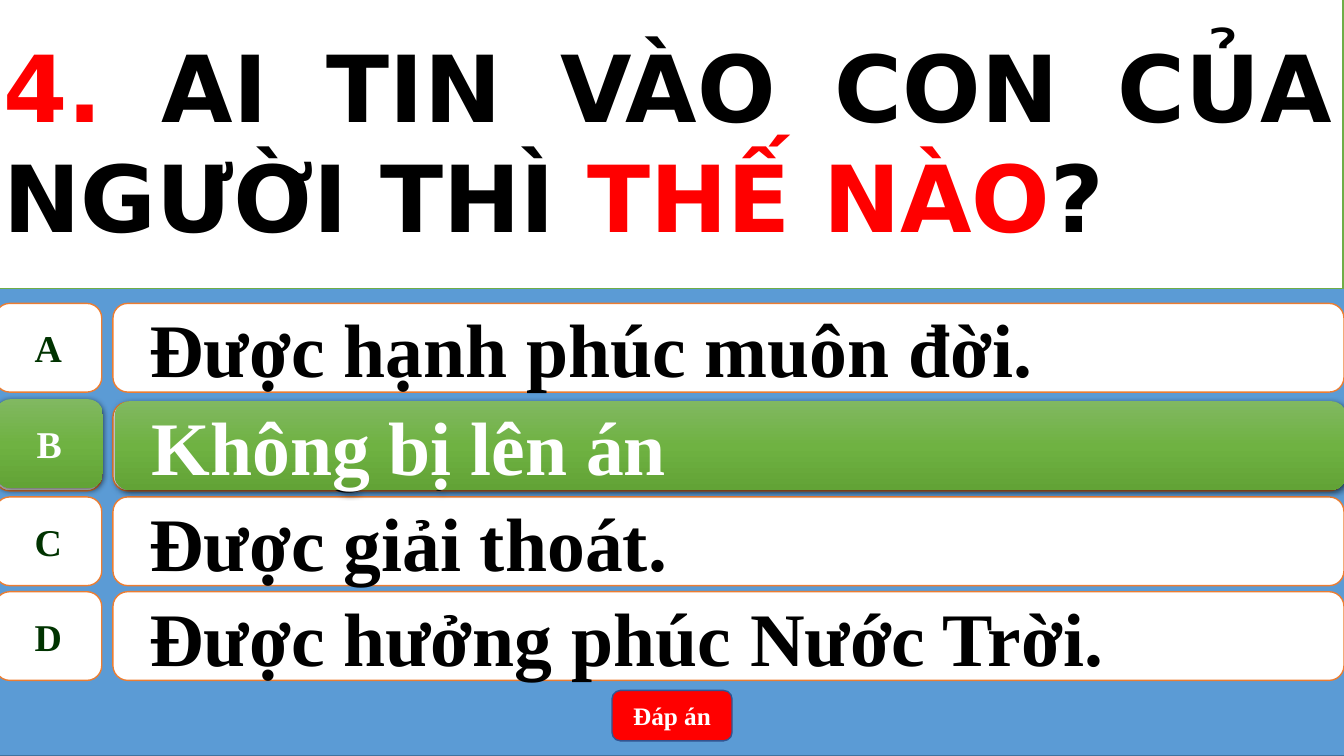
from copy import deepcopy
from dataclasses import dataclass

from pptx import Presentation
from pptx.dml.color import RGBColor
from pptx.enum.shapes import MSO_SHAPE as Shape
from pptx.enum.text import MSO_ANCHOR as Anchor, MSO_AUTO_SIZE as AutoSize, PP_ALIGN as Align
from pptx.oxml import parse_xml
from pptx.oxml.ns import nsdecls, qn
from pptx.util import Inches, Pt


@dataclass(frozen=True)
class Theme:
    blue: str = "5B9BD5"
    blue_edge: str = "43739E"
    button_edge: str = "325491"
    orange: str = "ED7D31"
    green: str = "70AD47"
    letter: str = "003300"
    red: str = "FF0000"
    black: str = "000000"
    white: str = "FFFFFF"
    correct: tuple = ("81B861", "6FB242", "62A336")
    serif: str = "Times New Roman"
    sans: str = "DejaVu Sans"
    question_size: int = 66
    answer_size: int = 54
    letter_size: int = 27
    button_size: int = 18


THEME = Theme()


def write(shape, *runs, size, font=THEME.serif, align=Align.CENTER, wrap=True, indent=None):
    """Fill a shape with bold (text, colour) runs in one paragraph."""
    frame = shape.text_frame
    frame.auto_size = AutoSize.NONE
    frame.word_wrap = wrap
    frame.vertical_anchor = Anchor.MIDDLE
    paragraph = frame.paragraphs[0]
    paragraph.alignment = align
    if indent:
        paragraph.level = 1
        properties = paragraph._p.get_or_add_pPr()
        properties.set("marL", str(Inches(indent[0])))
        properties.set("indent", str(Inches(indent[1])))
    for text, colour in runs:
        run = paragraph.add_run()
        run.text = text
        run.font.name = font
        run.font.size = Pt(size)
        run.font.bold = True
        run.font.color.rgb = RGBColor.from_string(colour)


def panel(parent, kind, left, top, width, height, fill, edge=None):
    """Add a preset shape; a tuple of colours gives a raised gradient panel."""
    shape = parent.add_shape(kind, Inches(left), Inches(top), Inches(width), Inches(height))
    shape.shadow.inherit = False
    if edge:
        shape.line.color.rgb = RGBColor.from_string(edge)
        shape.line.width = Pt(1)
    else:
        shape.line.fill.background()
    if isinstance(fill, str):
        shape.fill.solid()
        shape.fill.fore_color.rgb = RGBColor.from_string(fill)
        return shape

    shape.fill.gradient()
    shape.fill.gradient_angle = 270
    properties = shape._element.spPr
    stops = properties.find(qn("a:gradFill")).find(qn("a:gsLst"))
    middle = deepcopy(stops[0])
    middle.set("pos", "50000")
    stops.insert(1, middle)
    for stop, colour in zip(shape.fill.gradient_stops, fill):
        stop.color.rgb = RGBColor.from_string(colour)
    properties.find(qn("a:effectLst")).append(parse_xml(
        f'<a:outerShdw {nsdecls("a")} blurRad="{Pt(4.5)}" dist="{Pt(1.5)}" dir="5400000" '
        f'algn="ctr" rotWithShape="0"><a:srgbClr val="{THEME.black}">'
        '<a:alpha val="63000"/></a:srgbClr></a:outerShdw>'))
    return shape


deck = Presentation()
deck.slide_width, deck.slide_height = Inches(13.33), Inches(7.5)
slide = deck.slides.add_slide(deck.slide_layouts[5])

# Backdrop
panel(slide.shapes, Shape.RECTANGLE, -0.05, 0, 13.39, 7.5, THEME.blue, THEME.blue_edge)

# Answers, with the correct one laid over its plain row
PLAIN = (THEME.white, THEME.orange, THEME.letter, THEME.black)
CORRECT = (THEME.correct, None, THEME.white, THEME.white)
answers = [
    ("A", "Được hạnh phúc muôn đời.", -0.05, 3.01, 1.12, 3.01, PLAIN),
    ("B", "Không bị lên án", -0.05, 3.99, 1.12, 3.99, PLAIN),
    ("C", "Được giải thoát.", -0.05, 4.93, 1.12, 4.93, PLAIN),
    ("D", "Được hưởng phúc Nước Trời.", -0.05, 5.87, 1.12, 5.87, PLAIN),
    ("B", "Không bị lên án", -0.04, 3.96, 1.14, 3.98, CORRECT),
]
for letter, answer, letter_left, letter_top, answer_left, answer_top, look in answers:
    fill, edge, letter_colour, answer_colour = look
    row = slide.shapes.add_group_shape().shapes
    letter_box = panel(row, Shape.FLOWCHART_ALTERNATE_PROCESS,
                       letter_left, letter_top, 1.06, 0.88, fill, edge)
    write(letter_box, (letter, letter_colour), size=THEME.letter_size, wrap=False)
    answer_bar = panel(row, Shape.ROUNDED_RECTANGLE,
                       answer_left, answer_top, 12.21, 0.88, fill, edge)
    write(answer_bar, (answer, answer_colour), size=THEME.answer_size,
          align=Align.LEFT, indent=(0.5, -0.28))

# Answer button
button = panel(slide.shapes, Shape.ROUNDED_RECTANGLE, 6.07, 6.85, 1.19, 0.5,
               THEME.red, THEME.button_edge)
write(button, ("Đáp án", THEME.white), size=THEME.button_size)

# Question, brought in front of the backdrop
question = slide.shapes.title
question.left, question.top = Inches(-0.07), Inches(-0.07)
question.width, question.height = Inches(13.39), Inches(2.93)
question.fill.solid()
question.fill.fore_color.rgb = RGBColor.from_string(THEME.white)
question.line.color.rgb = RGBColor.from_string(THEME.green)
question.line.width = Pt(1)
write(question, ("4. ", THEME.red), ("AI TIN VÀO CON CỦA NGƯỜI THÌ ", THEME.black),
      ("THẾ NÀO", THEME.red), ("?", THEME.black),
      size=THEME.question_size, font=THEME.sans, align=Align.JUSTIFY)
slide.shapes._spTree.append(question._element)

deck.save("out.pptx")
